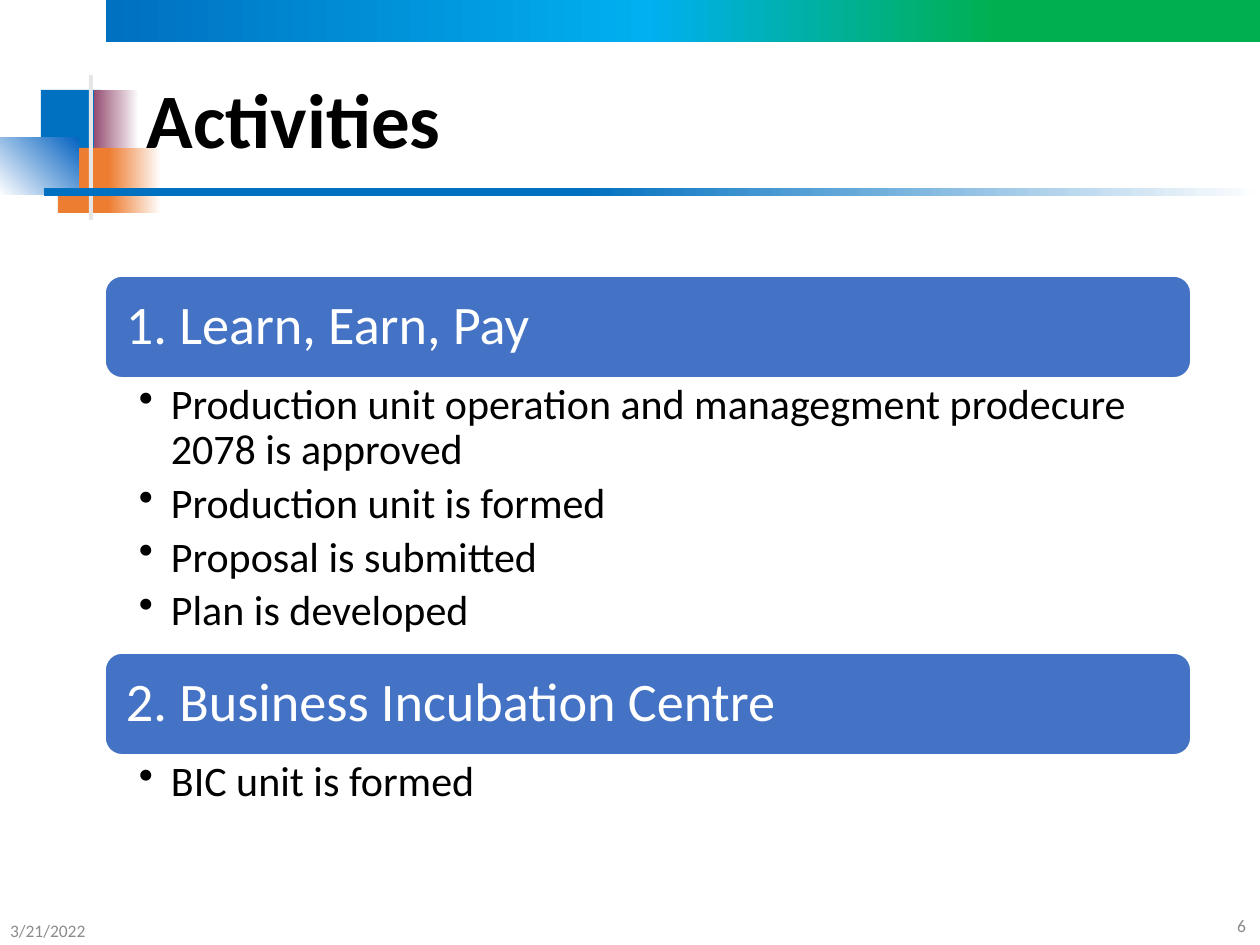
"""Build the Activities slide with its decorated header and two topic blocks."""
from lxml.etree import SubElement
from pptx import Presentation
from pptx.dml.color import RGBColor
from pptx.enum.shapes import MSO_SHAPE as SHAPE
from pptx.enum.text import MSO_ANCHOR as ANCHOR, PP_ALIGN as ALIGN
from pptx.oxml.ns import qn
from pptx.util import Pt

PX = 914400 / 126
C = {"blue": "0070C0", "sky": "00B0F0", "green": "00B050", "plum": "954F72",
     "orange": "ED7D31", "link": "0563C1", "pale": "E7E6E6", "white": "FFFFFF",
     "black": "000000", "bar": "4472C4", "date": "8C8C8C", "number": "898989"}

DECOR = [
    ((106, -1, 1154, 43), [(0, "blue"), (47, "sky"), (77, "green")], 0),
    ((41, 90, 60, 65), "blue", 0),
    ((94, 90, 45, 65), [(0, "plum"), (100, "white")], 0),
    ((58, 148, 59, 65), "orange", 0),
    ((109, 148, 52, 65), [(0, "orange"), (100, "white")], 0),
    ((0, 137, 79, 58), [(0, "white"), (100, "link")], 45),
    ((89, 75, 4, 145), "pale", 0),
    ((44, 188, 1216, 8), [(41, "blue"), (44, "blue"), (100, "white")], 0),
]
TOPICS = [
    ("1. Learn, Earn, Pay", 275, [
        "Production unit operation and managegment prodecure 2078 is approved",
        "Production unit is formed", "Proposal is submitted", "Plan is developed"]),
    ("2. Business Incubation Centre", 115, ["BIC unit is formed"]),
]
LEFT, TOP, WIDTH, BAR_H = 105, 276, 1086, 102
LABELS = [
    ("Activities", (134, 32, 1086, 183), dict(size=44, bold=True, color="black"), ALIGN.LEFT),
    ("3/21/2022", (-3, 907, 284, 50), dict(size=10, color="date"), ALIGN.LEFT),
    ("6", (975, 902, 284, 50), dict(size=10, color="number"), ALIGN.RIGHT),
]
BAR_FONT = dict(size=31, color="white")
BULLET_FONT = dict(size=24, color="black")


def emu(px):
    return round(px * PX)


def rgb(name):
    return RGBColor.from_string(C[name])


def paint(sp, fill, angle=0):
    if isinstance(fill, str):
        sp.fill.solid()
        sp.fill.fore_color.rgb = rgb(fill)
        return
    sp.fill.gradient()
    sp.fill.gradient_angle = angle
    stops = sp._element.spPr.find(".//" + qn("a:gsLst"))
    for old in list(stops):
        stops.remove(old)
    for pos, name in fill:
        stop = SubElement(stops, qn("a:gs"), pos=str(pos * 1000))
        SubElement(stop, qn("a:srgbClr"), val=C[name])


def add_shape(s, kind, box, fill, angle=0):
    sp = s.shapes.add_shape(kind, *map(emu, box))
    sp.shadow.inherit = False
    paint(sp, fill, angle)
    sp.line.fill.background()
    return sp


def set_text(sp, lines, font, margins=(13, 6, 13, 6), anchor=ANCHOR.MIDDLE,
             align=ALIGN.LEFT, after=0, bullet=False):
    tf = sp.text_frame
    sides = ("margin_left", "margin_top", "margin_right", "margin_bottom")
    frame = dict(zip(sides, map(emu, margins)), word_wrap=True, vertical_anchor=anchor)
    for name, value in frame.items():
        setattr(tf, name, value)
    for i, line in enumerate(lines):
        p = tf.add_paragraph() if i else tf.paragraphs[0]
        if bullet:
            pPr = p._p.get_or_add_pPr()
            pPr.set("marL", str(emu(32)))
            pPr.set("indent", str(emu(-32)))
            SubElement(pPr, qn("a:buChar"), char="•")
        p.alignment, p.line_spacing, p.space_after = align, 0.9, Pt(after)
        r = p.add_run()
        r.text = line
        values = dict(name="Calibri", size=Pt(font["size"]), bold=font.get("bold", False))
        for name, value in values.items():
            setattr(r.font, name, value)
        r.font.color.rgb = rgb(font["color"])


def main():
    prs = Presentation()
    prs.slide_width, prs.slide_height = emu(1260), emu(945)
    s = prs.slides.add_slide(prs.slide_layouts[6])

    for box, fill, angle in DECOR:
        add_shape(s, SHAPE.RECTANGLE, box, fill, angle)

    for text, box, font, align in LABELS:
        set_text(s.shapes.add_textbox(*map(emu, box)), [text], font, align=align)

    top = TOP
    for heading, height, points in TOPICS:
        bar = add_shape(s, SHAPE.ROUNDED_RECTANGLE, (LEFT, top, WIDTH, BAR_H), "bar")
        bar.line.color.rgb = rgb("white")
        bar.line.width = Pt(1)
        set_text(bar, [heading], BAR_FONT, (16, 16, 16, 16))
        top += BAR_H
        body = s.shapes.add_textbox(*map(emu, (LEFT, top, WIDTH, height)))
        set_text(body, points, BULLET_FONT, (34, 5, 30, 5), ANCHOR.TOP, after=4.8, bullet=True)
        top += height

    prs.save("out.pptx")


if __name__ == "__main__":
    main()
